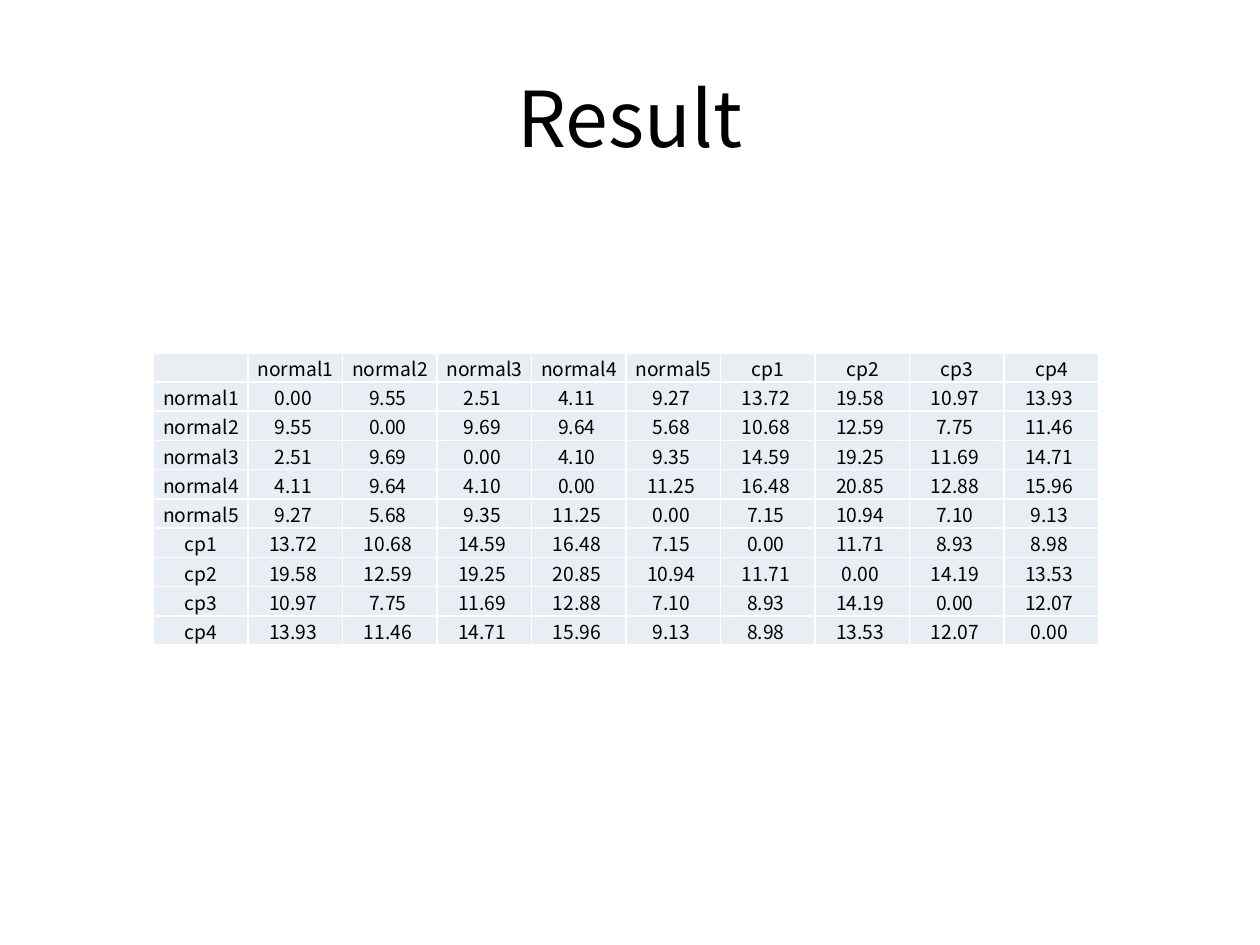
"""Build the result slide: a symmetric table of distances between samples."""
from dataclasses import dataclass

from lxml import etree
from pptx import Presentation
from pptx import util as u
from pptx.dml.color import RGBColor
from pptx.enum import text
from pptx.oxml.ns import qn


@dataclass(frozen=True)
class Theme:
    font: str = "Noto Sans CJK KR"
    ink: str = "000000"
    cell_fill: str = "E9EDF4"
    border: str = "FFFFFF"
    border_width: float = 1
    title_size: float = 44
    cell_size: float = 11
    cell_margin: float = 0.01


@dataclass(frozen=True)
class Box:
    left: float
    top: float
    width: float
    height: float

    def on(self, deck) -> tuple[int, int, int, int]:
        wide, high = deck.slide_width, deck.slide_height
        return (round(self.left * wide), round(self.top * high),
                round(self.width * wide), round(self.height * high))


THEME = Theme()
TITLE_BOX = Box(0.05, 0.04, 0.9, 1 / 6)
TABLE_BOX = Box(0.122, 28 / 75, 0.75, 23 / 75)
SAMPLES = ["normal1", "normal2", "normal3", "normal4", "normal5",
           "cp1", "cp2", "cp3", "cp4"]
LOWER_TRIANGLE = [
    [0],
    [9.55, 0],
    [2.51, 9.69, 0],
    [4.11, 9.64, 4.10, 0],
    [9.27, 5.68, 9.35, 11.25, 0],
    [13.72, 10.68, 14.59, 16.48, 7.15, 0],
    [19.58, 12.59, 19.25, 20.85, 10.94, 11.71, 0],
    [10.97, 7.75, 11.69, 12.88, 7.10, 8.93, 14.19, 0],
    [13.93, 11.46, 14.71, 15.96, 9.13, 8.98, 13.53, 12.07, 0],
]


def distance(first: int, second: int) -> float:
    return LOWER_TRIANGLE[max(first, second)][min(first, second)]


def table_rows() -> list[list[str]]:
    count = len(SAMPLES)
    body = [[name] + [f"{distance(row, column):.2f} " for column in range(count)]
            for row, name in enumerate(SAMPLES)]
    return [["", *SAMPLES], *body]


def format_para(para, size: float) -> None:
    para.alignment = text.PP_ALIGN.CENTER
    for span in para.runs:
        span.font.name = THEME.font
        span.font.size = u.Pt(size)
        span.font.color.rgb = RGBColor.from_string(THEME.ink)
    if not para.runs:
        etree.SubElement(para._p, qn("a:endParaRPr"), sz=str(round(size * 100)))


def add_borders(cell) -> None:
    properties = cell._tc.get_or_add_tcPr()
    for side in ("lnL", "lnR", "lnT", "lnB"):
        line = etree.SubElement(properties, qn(f"a:{side}"),
                                w=str(u.Pt(THEME.border_width)))
        fill = etree.SubElement(line, qn("a:solidFill"))
        etree.SubElement(fill, qn("a:srgbClr"), val=THEME.border)


def fill_cell(cell, words: str) -> None:
    cell.text_frame.text = words
    cell.vertical_anchor = text.MSO_ANCHOR.MIDDLE
    cell.margin_left = cell.margin_right = cell.margin_top = u.Inches(THEME.cell_margin)
    cell.margin_bottom = 0
    add_borders(cell)
    cell.fill.solid()
    cell.fill.fore_color.rgb = RGBColor.from_string(THEME.cell_fill)
    format_para(cell.text_frame.paragraphs[0], THEME.cell_size)


def add_title(deck, page, words: str) -> None:
    title = page.shapes.title
    title.left, title.top, title.width, title.height = TITLE_BOX.on(deck)
    title.text_frame.text = words
    title.text_frame.vertical_anchor = text.MSO_ANCHOR.MIDDLE
    format_para(title.text_frame.paragraphs[0], THEME.title_size)


def add_distances(deck, page, rows: list[list[str]]) -> None:
    table = page.shapes.add_table(len(rows), len(rows[0]), *TABLE_BOX.on(deck)).table
    table.first_row = table.horz_banding = False
    for row, values in enumerate(rows):
        for column, words in enumerate(values):
            fill_cell(table.cell(row, column), words)


def main() -> None:
    deck = Presentation()
    deck.slide_width, deck.slide_height = u.Inches(10), u.Inches(7.5)
    page = deck.slides.add_slide(deck.slide_layouts.get_by_name("Title Only"))
    add_title(deck, page, "Result")
    add_distances(deck, page, table_rows())
    deck.save("out.pptx")


if __name__ == "__main__":
    main()
